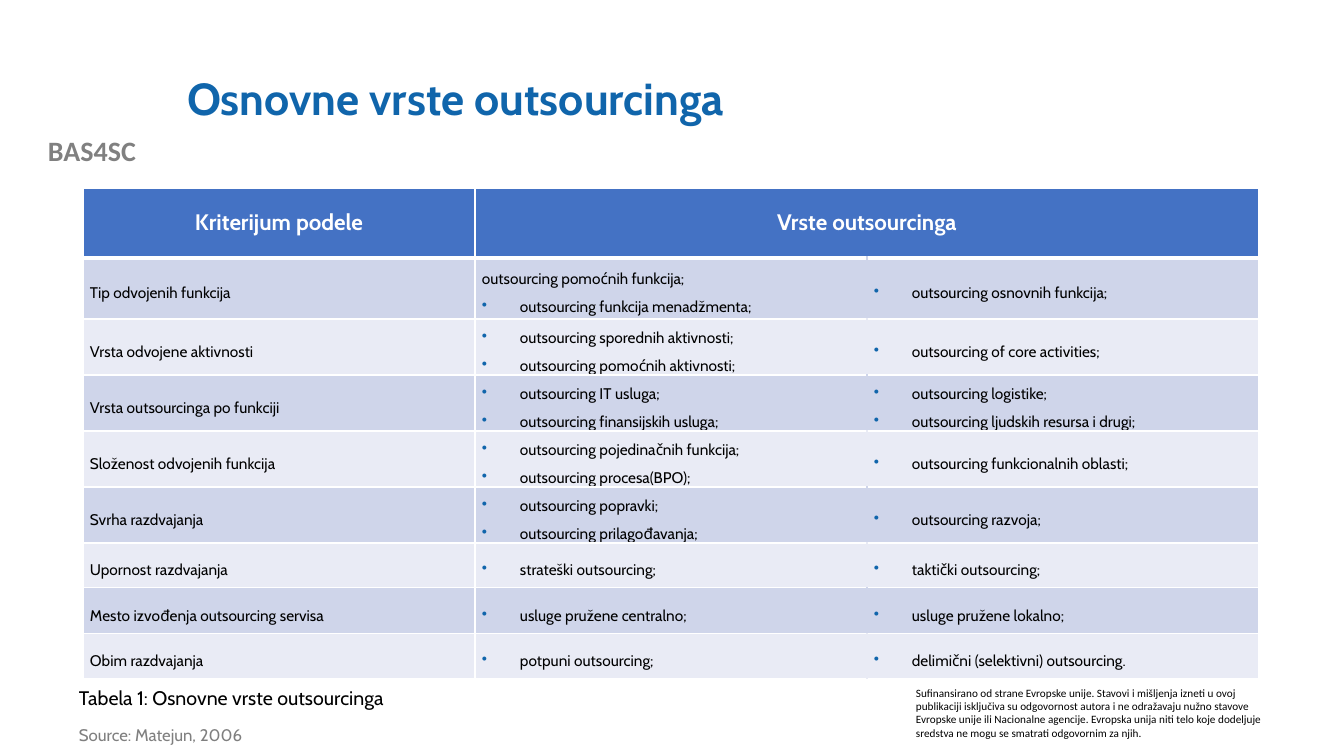
from lxml import etree
from pptx import Presentation, util as u
from pptx.dml.color import RGBColor
from pptx.enum import text
from pptx.oxml.ns import qn

# Content
TITLE = "Osnovne vrste outsourcinga"
PROJECT = "BAS4SC"
CAPTION = "Tabela 1: Osnovne vrste outsourcinga"
SOURCE = "Source: Matejun, 2006"
FUNDING = ("Sufinansirano od strane Evropske unije. Stavovi i mišljenja izneti u ovoj "
           "publikaciji isključiva su odgovornost autora i ne odražavaju nužno stavove "
           "Evropske unije ili Nacionalne agencije. Evropska unija niti telo koje dodeljuje "
           "sredstva ne mogu se smatrati odgovornim za njih.")
HEADERS = ["Kriterijum podele", "Vrste outsourcinga"]
# Criterion, first group of types, second group of types
CRITERIA = [
    ("Tip odvojenih funkcija",
     ["outsourcing pomoćnih funkcija;", "outsourcing funkcija menadžmenta;"],
     ["outsourcing osnovnih funkcija;"]),
    ("Vrsta odvojene aktivnosti",
     ["outsourcing sporednih aktivnosti;", "outsourcing pomoćnih aktivnosti;"],
     ["outsourcing of core activities;"]),
    ("Vrsta outsourcinga po funkciji",
     ["outsourcing IT usluga;", "outsourcing finansijskih usluga;"],
     ["outsourcing logistike;", "outsourcing ljudskih resursa i drugi;"]),
    ("Složenost odvojenih funkcija",
     ["outsourcing pojedinačnih funkcija;", "outsourcing procesa(BPO);"],
     ["outsourcing funkcionalnih oblasti;"]),
    ("Svrha razdvajanja",
     ["outsourcing popravki;", "outsourcing prilagođavanja;"],
     ["outsourcing razvoja;"]),
    ("Upornost razdvajanja", ["strateški outsourcing;"], ["taktički outsourcing;"]),
    ("Mesto izvođenja outsourcing servisa",
     ["usluge pružene centralno;"], ["usluge pružene lokalno;"]),
    ("Obim razdvajanja",
     ["potpuni outsourcing;"], ["delimični (selektivni) outsourcing."]),
]
UNBULLETED = CRITERIA[0][1][0]
BLUE, HEADER_FILL, WHITE, BLACK = "1065AB", "4472C4", "FFFFFF", "000000"
BANDS = ["CFD5EA", "E9EBF5"]
ROW_HEIGHTS = [70, 61, 56, 56, 56, 56, 45, 46, 45]
COLUMN_WIDTH = 392
INDENT = 38
ALIGN = text.PP_ALIGN
EMU_PER_PX = 914400 / 100.8


def px(length):
    return u.Emu(round(length * EMU_PER_PX))


def colour(value):
    return RGBColor.from_string(value)


def style(paragraph, size, value, font="Cabin", bold=False, align=None):
    paragraph.font.size = u.Pt(size)
    paragraph.font.name = font
    paragraph.font.bold = bold
    paragraph.font.color.rgb = colour(value)
    paragraph.alignment = align


def add_label(words, box, size, value, **look):
    label = slide.shapes.add_textbox(*map(px, box))
    label.text_frame.word_wrap = True
    paragraph = label.text_frame.paragraphs[0]
    paragraph.text = words
    style(paragraph, size, value, **look)
    return paragraph


def add_bullet(paragraph):
    props = paragraph._p.get_or_add_pPr()
    props.set("marL", str(px(INDENT)))
    props.set("indent", str(-px(INDENT)))
    tint = etree.SubElement(props, qn("a:buClr"))
    etree.SubElement(tint, qn("a:srgbClr"), val=BLUE)
    etree.SubElement(props, qn("a:buChar"), char="•")


def paint_cell(cell, fill, left=WHITE, right=WHITE, bottom=1):
    props = cell._tc.get_or_add_tcPr()
    for side, value, width in (("L", left, 1), ("R", right, 1),
                               ("T", WHITE, 1), ("B", WHITE, bottom)):
        line = etree.SubElement(props, qn("a:ln" + side), w=str(u.Pt(width)))
        solid = etree.SubElement(line, qn("a:solidFill"))
        etree.SubElement(solid, qn("a:srgbClr"), val=value)
    cell.fill.solid()
    cell.fill.fore_color.rgb = colour(fill)
    cell.vertical_anchor = text.MSO_ANCHOR.MIDDLE


def fill_cell(cell, lines, bulleted, space_after):
    cell.margin_left = cell.margin_right = px(7)
    cell.margin_top = cell.margin_bottom = 0
    frame = cell.text_frame
    for i, words in enumerate(lines):
        paragraph = frame.add_paragraph() if i else frame.paragraphs[0]
        paragraph.text = words
        if bulleted and words != UNBULLETED:
            add_bullet(paragraph)
        style(paragraph, 11, BLACK, align=ALIGN.JUSTIFY)
        paragraph.line_spacing = 1.5
    if space_after:
        paragraph.space_after = u.Pt(6)


prs = Presentation()
prs.slide_width, prs.slide_height = px(1344), px(756)
slide = prs.slides.add_slide(prs.slide_layouts[5])

# Project name and funding note
add_label(PROJECT, (0, 129, 184, 44), 20, "808080",
          font="Calibri", bold=True, align=ALIGN.CENTER)
add_label(FUNDING, (906, 681, 371, 65), 8, BLACK, font="Calibri")

# Title
title = slide.shapes.title
title.left, title.top, title.width, title.height = map(px, (177, 40, 1075, 123))
title.text_frame.text = TITLE
title.text_frame.vertical_anchor = text.MSO_ANCHOR.MIDDLE
heading = title.text_frame.paragraphs[0]
style(heading, 32, BLUE, bold=True, align=ALIGN.LEFT)
heading.line_spacing = 0.9

# Table of outsourcing types
table = slide.shapes.add_table(len(ROW_HEIGHTS), 3, px(83), px(188),
                               px(3 * COLUMN_WIDTH), px(sum(ROW_HEIGHTS))).table
for column in table.columns:
    column.width = px(COLUMN_WIDTH)
for row, height in zip(table.rows, ROW_HEIGHTS):
    row.height = px(height)

table.cell(0, 1).merge(table.cell(0, 2))
for c in range(3):
    paint_cell(table.cell(0, c), HEADER_FILL, bottom=3)
for c, words in enumerate(HEADERS):
    header = table.cell(0, c).text_frame.paragraphs[0]
    header.text = words
    style(header, 16, WHITE, bold=True, align=ALIGN.CENTER)

for r, (criterion, first_types, second_types) in enumerate(CRITERIA, start=1):
    band = BANDS[(r - 1) % 2]
    name, first, second = table.rows[r].cells
    fill_cell(name, [criterion], bulleted=False, space_after=True)
    fill_cell(first, first_types, bulleted=True, space_after=False)
    fill_cell(second, second_types, bulleted=True, space_after=True)
    paint_cell(name, band)
    paint_cell(first, band, right=band)
    paint_cell(second, band, left=band)

# Caption and source under the table
add_label(CAPTION, (69, 681, 443, 34), 14, BLACK)
add_label(SOURCE, (69, 722, 505, 34), 12, "7F7F7F").line_spacing = 0.9

prs.save("out.pptx")
